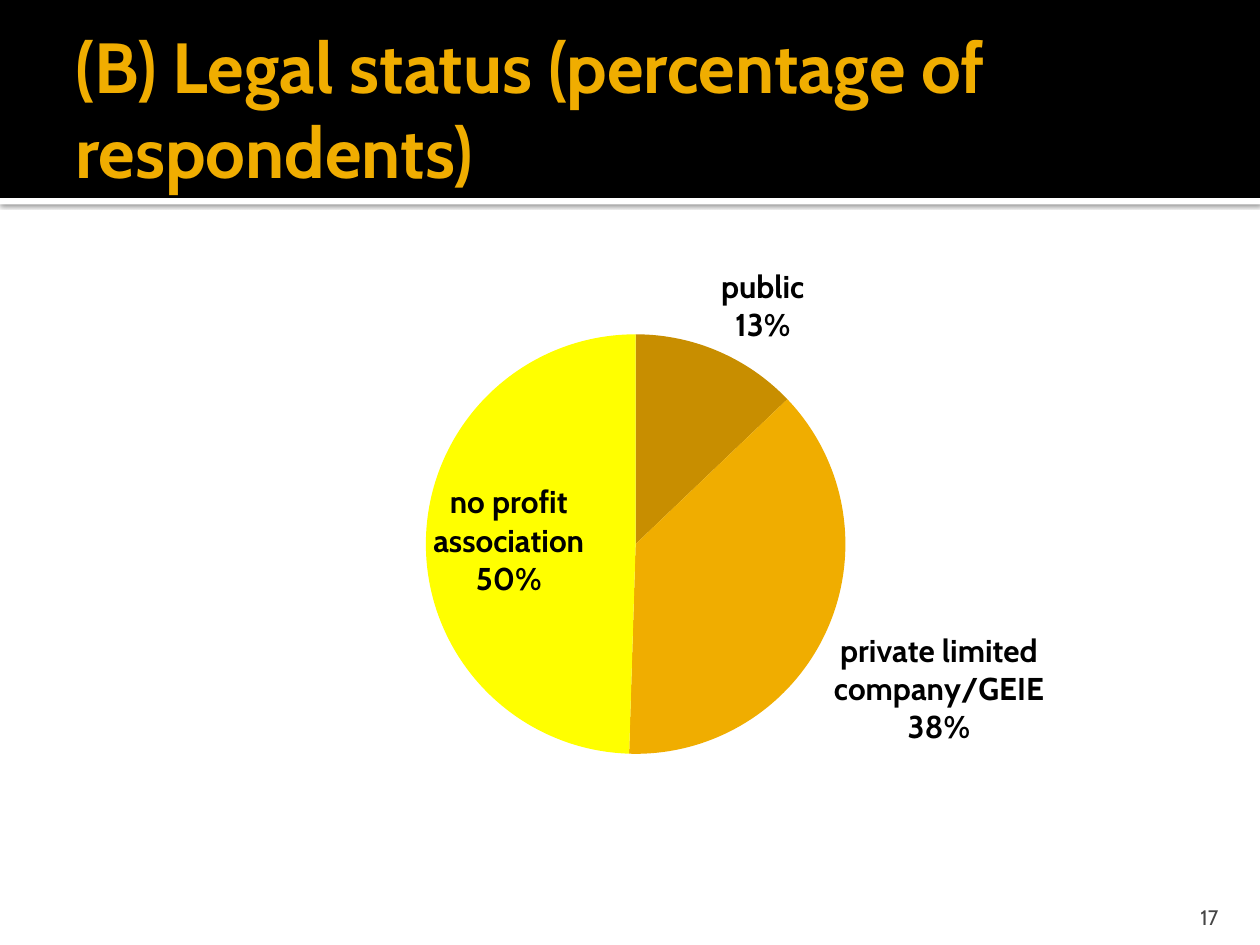
from lxml import etree
from pptx import Presentation
from pptx.chart.data import CategoryChartData
from pptx.dml.color import RGBColor
from pptx.enum.chart import XL_CHART_TYPE, XL_LABEL_POSITION
from pptx.enum.shapes import MSO_SHAPE
from pptx.enum.text import MSO_ANCHOR, PP_ALIGN
from pptx.oxml import parse_xml
from pptx.oxml.ns import nsdecls, qn
from pptx.util import Cm, Pt

RECT = MSO_SHAPE.RECTANGLE
PIE = XL_CHART_TYPE.PIE
OUTSIDE, INSIDE = XL_LABEL_POSITION.OUTSIDE_END, XL_LABEL_POSITION.INSIDE_END
MIDDLE, BOTTOM = MSO_ANCHOR.MIDDLE, MSO_ANCHOR.BOTTOM
LEFT, RIGHT = PP_ALIGN.LEFT, PP_ALIGN.RIGHT

FONT = "Cabin"
GOLD, BLACK, WHITE, GREY = "F0AD00", "000000", "FFFFFF", "454545"
STATUS = [
    ("public", 13, "C88E00"),
    ("private limited company/GEIE", 38, GOLD),
    ("no profit association", 50, "FFFF00"),
]
PIE_LAYOUT = {"x": 0.32, "y": 0.14, "w": 0.37, "h": 0.66}


def rgb(value):
    """Turn a hex string into a colour."""
    return RGBColor.from_string(value)


def set_font(font, size, color, bold=False):
    """Format a font."""
    font.name, font.size, font.bold = FONT, Pt(size), bold
    font.color.rgb = rgb(color)


def add_band(s, top, height, color):
    """Add a full-width band and return it."""
    sp = s.shapes.add_shape(RECT, 0, Cm(top), Cm(25.4), Cm(height))
    sp.fill.solid()
    sp.fill.fore_color.rgb = rgb(color)
    sp.line.fill.background()
    sp.shadow.inherit = False
    return sp


def add_shadow(sp):
    """Cast a soft shadow below a shape."""
    effects = sp.element.spPr.find(qn("a:effectLst"))
    effects.append(parse_xml(
        f'<a:outerShdw {nsdecls("a")} blurRad="{Pt(2.5)}" dist="{Pt(0.8)}" '
        'dir="5400000" algn="tl" rotWithShape="0"><a:srgbClr val="000000">'
        '<a:alpha val="60000"/></a:srgbClr></a:outerShdw>'))


def add_text(s, text, box, size=12, color=BLACK, bold=False, align=LEFT,
             anchor=MIDDLE, insets=(0.25, 0.13, 0.13, 0.13)):
    """Add a wrapped text box holding one run."""
    tf = s.shapes.add_textbox(*map(Cm, box)).text_frame
    tf.word_wrap, tf.vertical_anchor = True, anchor
    tf.margin_left, tf.margin_top, tf.margin_right, tf.margin_bottom = map(Cm, insets)
    p = tf.paragraphs[0]
    p.alignment = align
    r = p.add_run()
    r.text = text
    set_font(r.font, size, color, bold)


def show_category_and_percent(labels):
    """Make labels show the category above the percentage."""
    for name, shown in (("showVal", 0), ("showCatName", 1), ("showPercent", 1)):
        labels.find(qn(f"c:{name}")).set("val", str(shown))
    separator = etree.Element(qn("c:separator"))
    separator.text = "\n"
    labels.find(qn("c:showBubbleSize")).addnext(separator)


def set_plot_layout(chart, layout):
    """Fix the inner plot area as fractions of the chart."""
    area = chart.plots[0]._element.getparent()
    old = area.find(qn("c:layout"))
    if old is not None:
        area.remove(old)
    sizes = "".join(f'<c:{k} val="{v}"/>' for k, v in layout.items())
    area.insert(0, parse_xml(
        f'<c:layout {nsdecls("c")}><c:manualLayout><c:layoutTarget val="inner"/>'
        f'<c:xMode val="edge"/><c:yMode val="edge"/>{sizes}'
        '</c:manualLayout></c:layout>'))


def add_pie(s, box):
    """Add the legal status pie with its labels."""
    data = CategoryChartData()
    data.categories = [name for name, _, _ in STATUS]
    data.add_series("Series 1", [value for _, value, _ in STATUS])
    chart = s.shapes.add_chart(PIE, *map(Cm, box), data).chart
    chart.has_legend = chart.has_title = False
    set_font(chart.font, 18, BLACK)
    set_plot_layout(chart, PIE_LAYOUT)
    chart.plots[0].vary_by_categories = True
    series = chart.plots[0].series[0]
    for i, (_, _, color) in enumerate(STATUS):
        point = series.points[i]
        point.format.fill.solid()
        point.format.fill.fore_color.rgb = rgb(color)
        label = point.data_label
        set_font(label.font, 18, BLACK, bold=True)
        label.position = INSIDE if i == len(STATUS) - 1 else OUTSIDE
    set_font(series.data_labels.font, 18, BLACK, bold=True)
    for labels in series._element.xpath(".//c:dLbl | .//c:dLbls"):
        show_category_and_percent(labels)


def main():
    """Build the slide and save it."""
    prs = Presentation()
    prs.slide_width, prs.slide_height = Cm(25.4), Cm(19.05)
    s = prs.slides.add_slide(prs.slide_layouts[6])
    add_shadow(add_band(s, 3.99, 0.13, WHITE))
    add_band(s, 0, 3.99, BLACK)
    add_text(s, "(B) Legal status (percentage of respondents)",
             (1.27, 0.43, 22.86, 3.48), size=40.5, color=GOLD, bold=True)
    add_text(s, "17", (22.78, 17.98, 2.03, 0.76), color=GREY, align=RIGHT,
             anchor=BOTTOM, insets=(0.25, 0.13, 0.25, 0))
    add_pie(s, (1.27, 4.93, 22.86, 12.85))
    prs.save("out.pptx")


if __name__ == "__main__":
    main()
